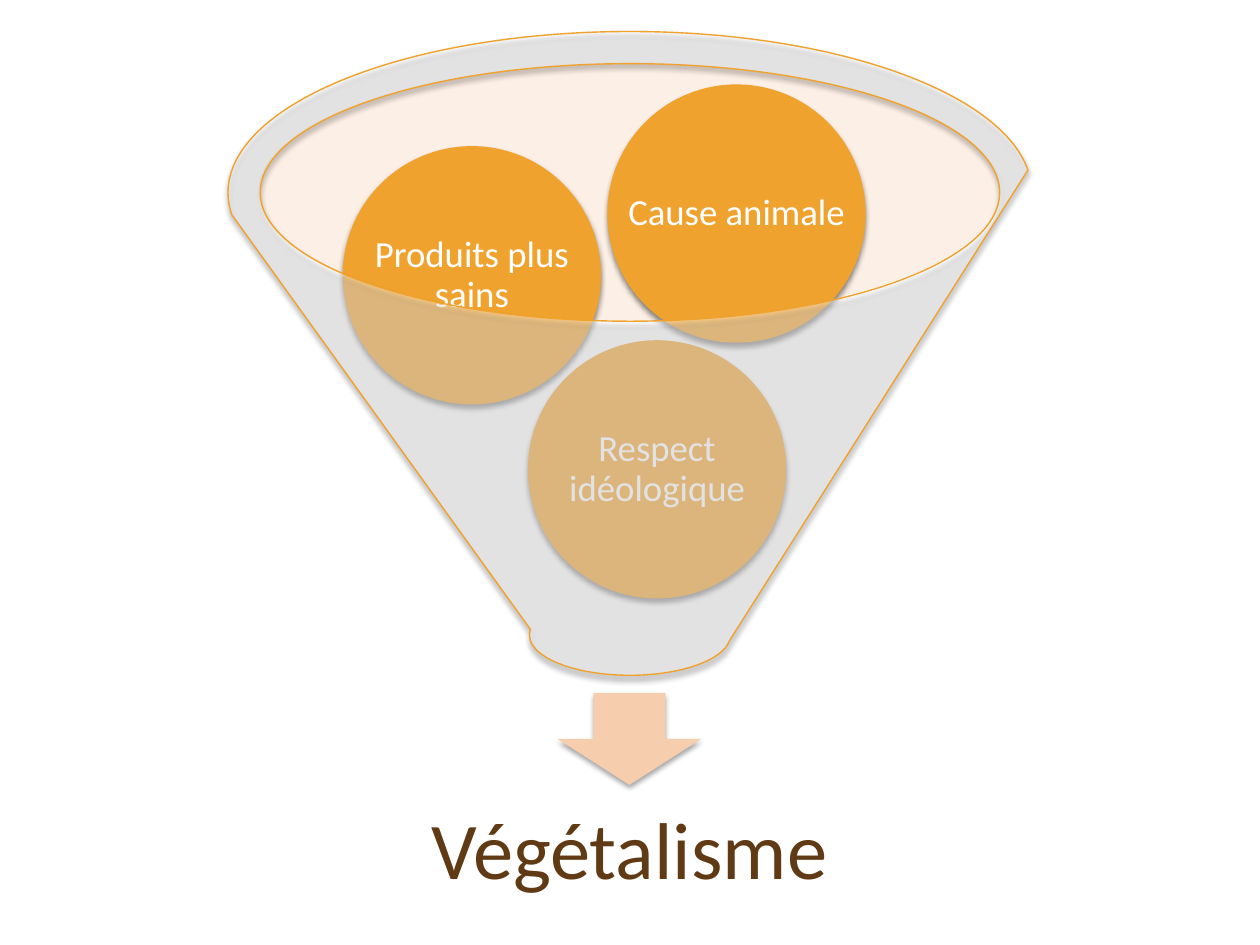
from lxml import etree
from pptx import Presentation
from pptx import util as u
from pptx.dml.color import RGBColor
from pptx.enum import shapes, text
from pptx.oxml.ns import qn

SHAPE = shapes.MSO_SHAPE
ORANGE = "F0A22E"
SOFT_SHADOW = {"alpha": 45, "distance": 2.4}
ARROW_SHADOW = {"alpha": 35, "distance": 2}


def color(value):
    return RGBColor.from_string(value)


def add_alpha(parent, percent):
    etree.SubElement(parent, qn("a:alpha"), val=str(percent * 1000))


def add_shadow(shape, alpha, distance):
    effects = shape._element.spPr.find(qn("a:effectLst"))
    shadow = etree.SubElement(
        effects, qn("a:outerShdw"), blurRad=str(u.Pt(3)),
        dist=str(u.Pt(distance)), dir="5400000", rotWithShape="0")
    add_alpha(etree.SubElement(shadow, qn("a:srgbClr"), val="000000"), alpha)


def add_figure(page, kind, box, fill, opacity=None, line=None, shadow=None):
    shape = page.shapes.add_shape(kind, *map(u.Inches, box))
    shape.shadow.inherit = False
    shape.fill.solid()
    shape.fill.fore_color.rgb = color(fill)
    if opacity:
        add_alpha(shape._element.spPr.find(".//" + qn("a:srgbClr")), opacity)
    if line:
        shape.line.color.rgb = color(line)
        shape.line.width = u.Pt(0.79)
    else:
        shape.line.fill.background()
    if shadow:
        add_shadow(shape, **shadow)
    return shape


def add_label(page, box, words, size, ink, inset):
    frame = page.shapes.add_textbox(*map(u.Inches, box)).text_frame
    margins = {f"margin_{side}": u.Inches(inset)
               for side in ("left", "top", "right", "bottom")}
    layout = {"word_wrap": True, "vertical_anchor": text.MSO_ANCHOR.MIDDLE}
    for name, value in {**margins, **layout}.items():
        setattr(frame, name, value)
    para = frame.paragraphs[0]
    para.alignment = text.PP_ALIGN.CENTER
    para.line_spacing = 0.9
    span = para.add_run()
    span.text = words
    for name, value in {"name": "Calibri", "size": u.Pt(size)}.items():
        setattr(span.font, name, value)
    span.font.color.rgb = color(ink)


def add_ball(page, box, words):
    add_figure(page, SHAPE.OVAL, box, ORANGE, shadow=SOFT_SHADOW)
    add_label(page, box, words, 21, "FFFFFF", 0.03)


def add_funnel(page, box):
    left, top, width, height = box
    add_figure(page, SHAPE.OVAL, (left + 0.24, top + 0.25, 5.88, 2.04),
               "F8D7BE", opacity=40)
    diameter = 2.05
    balls = [
        (2.38, 2.45, "Respect idéologique"),
        (0.91, 0.91, "Produits plus sains"),
        (3.01, 0.42, "Cause animale"),
    ]
    for across, down, words in balls:
        add_ball(page, (left + across, top + down, diameter, diameter), words)
    add_figure(page, SHAPE.FUNNEL, box, "FFFFFF", opacity=40,
               line=ORANGE, shadow=SOFT_SHADOW)


def add_result(page, box):
    left, top, width, height = box
    arrow_width = 1.14
    arrow_left = left + (width - arrow_width) / 2
    add_figure(page, SHAPE.DOWN_ARROW, (arrow_left, top, arrow_width, 0.73),
               "F6CEAD", shadow=ARROW_SHADOW)
    label_height = 1.37
    add_label(page, (left, top + height - label_height, width, label_height),
              "Végétalisme", 46, "603A14", 0.36)


def main():
    deck = Presentation()
    deck.slide_width, deck.slide_height = u.Inches(10), u.Inches(7.5)
    page = deck.slides.add_slide(deck.slide_layouts[6])
    add_result(page, (2.26, 5.5, 5.47, 1.96))
    add_funnel(page, (1.81, 0.25, 6.38, 5.11))
    deck.save("out.pptx")


if __name__ == "__main__":
    main()
